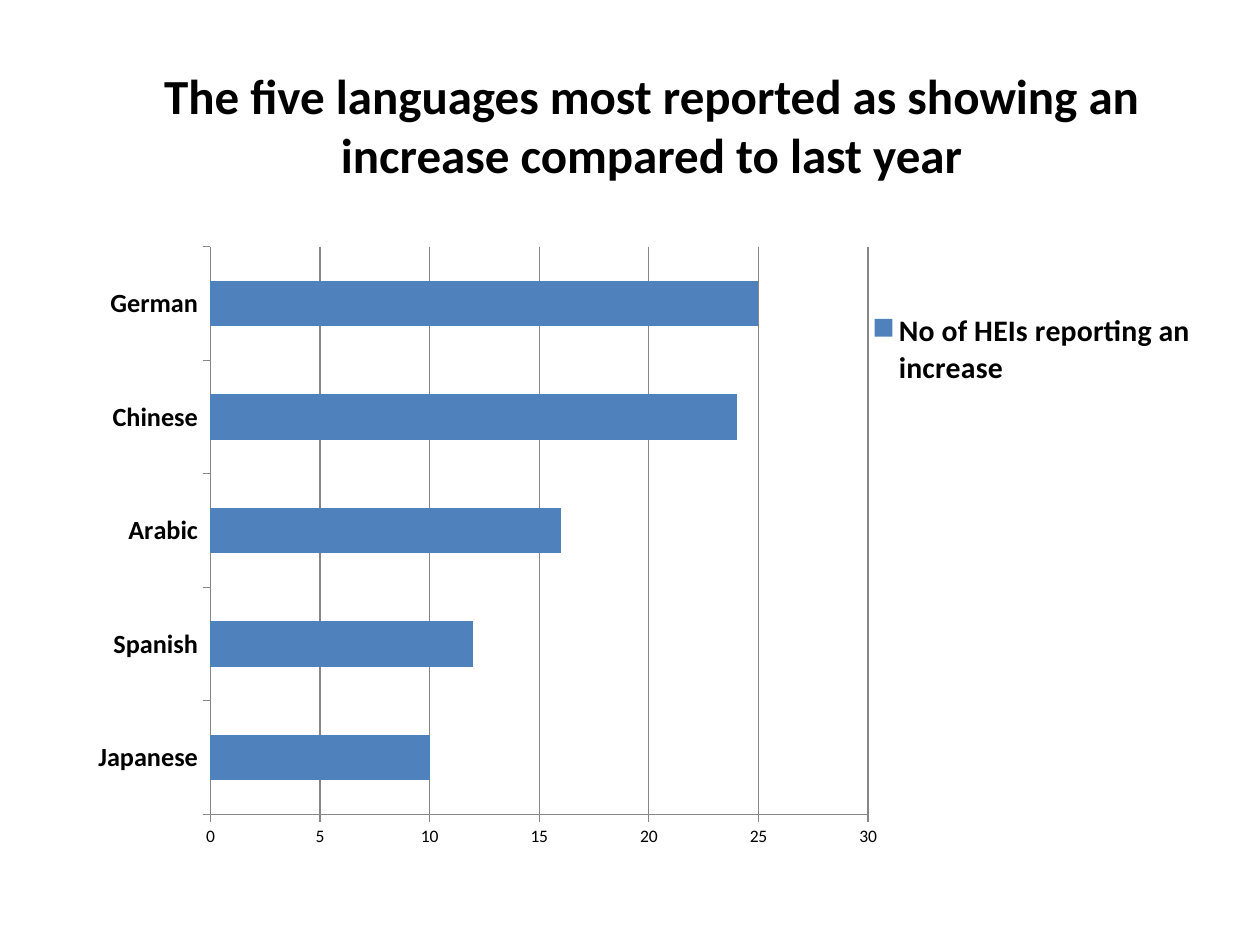
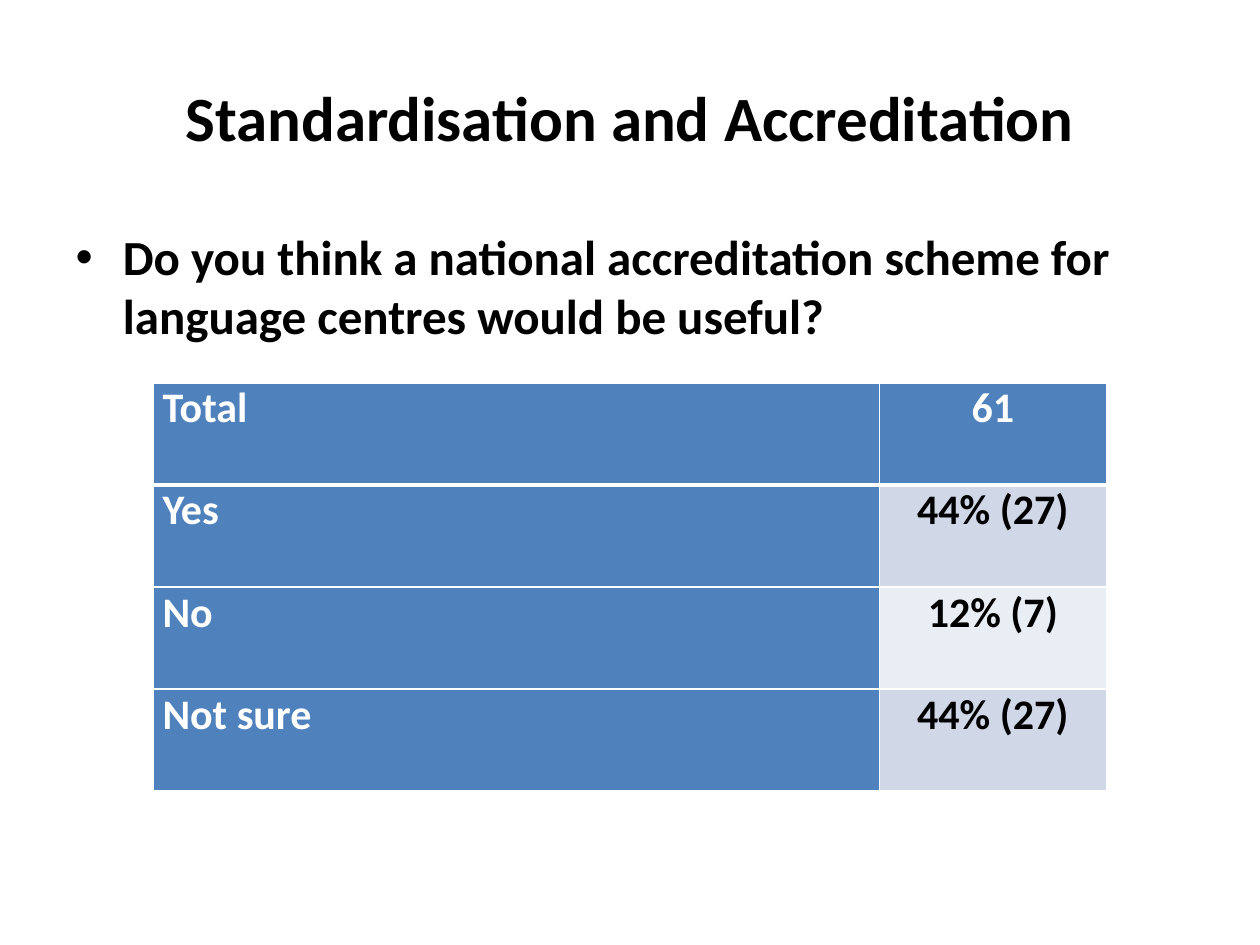
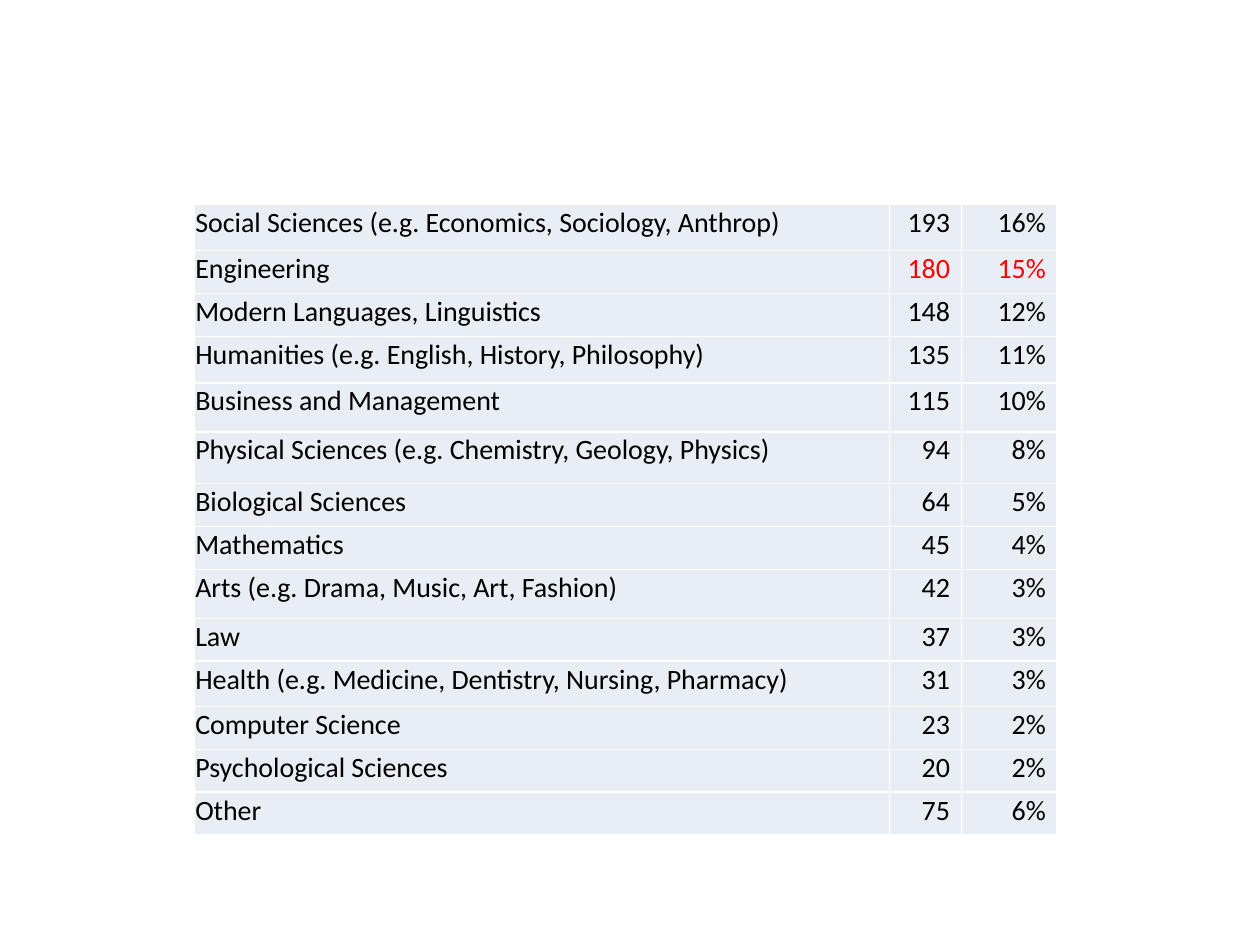
from dataclasses import dataclass

from lxml.etree import SubElement
from pptx import Presentation
from pptx.chart.data import CategoryChartData
from pptx.dml.color import RGBColor
from pptx.enum.chart import XL_CHART_TYPE, XL_LEGEND_POSITION, XL_TICK_MARK
from pptx.enum.text import PP_ALIGN
from pptx.oxml import parse_xml
from pptx.oxml.ns import nsdecls, qn
from pptx.util import Inches, Pt


@dataclass(frozen=True)
class Theme:
    font: str = "Calibri"
    text: str = "000000"
    white: str = "FFFFFF"
    accent: str = "4F81BD"
    band_dark: str = "D0D8E8"
    band_light: str = "E9EDF4"
    highlight: str = "FF0000"
    axis: str = "868686"
    title_size: int = 36
    lead_size: int = 28
    answer_size: int = 24
    subject_size: int = 16
    legend_size: int = 17
    category_size: int = 15
    value_size: int = 10


THEME = Theme()
TITLE_ONLY, TITLE_AND_BODY, BLANK = 5, 1, 6

LANGUAGES = [("Japanese", 10), ("Spanish", 12), ("Arabic", 16), ("Chinese", 24), ("German", 25)]
ANSWERS = [("Total", "61"), ("Yes", "44% (27)"), ("No", "12% (7)"), ("Not sure", "44% (27)")]
SUBJECTS = [
    ("Social Sciences (e.g. Economics, Sociology, Anthrop)", "193", "16%", 0.37),
    ("Engineering", "180", "15%", 0.34),
    ("Modern Languages, Linguistics", "148", "12%", 0.34),
    ("Humanities (e.g. English, History, Philosophy)", "135", "11%", 0.37),
    ("Business and Management", "115", "10%", 0.39),
    ("Physical Sciences (e.g. Chemistry, Geology, Physics)", "94", "8%", 0.41),
    ("Biological Sciences", "64", "5%", 0.34),
    ("Mathematics", "45", "4%", 0.34),
    ("Arts (e.g. Drama, Music, Art, Fashion)", "42", "3%", 0.39),
    ("Law", "37", "3%", 0.34),
    ("Health (e.g. Medicine, Dentistry, Nursing, Pharmacy)", "31", "3%", 0.36),
    ("Computer Science", "23", "2%", 0.34),
    ("Psychological Sciences", "20", "2%", 0.34),
    ("Other", "75", "6%", 0.34),
]


def style_font(font, size, color=THEME.text, bold=False):
    font.name = THEME.font
    font.size = Pt(size)
    font.bold = bold
    font.color.rgb = RGBColor.from_string(color)


def place(shape, left, top, width, height):
    shape.left, shape.top = Inches(left), Inches(top)
    shape.width, shape.height = Inches(width), Inches(height)


def fill_placeholder(shape, text, size, box):
    place(shape, *box)
    shape.text_frame.text = text
    for run in shape.text_frame.paragraphs[0].runs:
        style_font(run.font, size, bold=True)


def set_layout(element, x, y, width, height, inner=False):
    """Give a plot area or legend a manual place, in fractions of the chart."""
    for old in element.findall(qn("c:layout")):
        element.remove(old)
    target = '<c:layoutTarget val="inner"/>' if inner else ""
    layout = parse_xml(
        f'<c:layout {nsdecls("c")}><c:manualLayout>{target}'
        '<c:xMode val="edge"/><c:yMode val="edge"/>'
        f'<c:x val="{x}"/><c:y val="{y}"/><c:w val="{width}"/><c:h val="{height}"/>'
        "</c:manualLayout></c:layout>"
    )
    position = element.find(qn("c:legendPos"))
    if position is None:
        element.insert(0, layout)
    else:
        position.addnext(layout)


def style_line(line):
    line.color.rgb = RGBColor.from_string(THEME.axis)
    line.width = Pt(0.75)


def add_bar_chart(slide, name, points, box):
    data = CategoryChartData()
    data.categories = [label for label, _ in points]
    data.add_series(name, [value for _, value in points])
    frame = slide.shapes.add_chart(XL_CHART_TYPE.BAR_CLUSTERED, *map(Inches, box), data)
    chart = frame.chart
    chart.has_title = False
    style_font(chart.font, THEME.value_size)

    plot = chart.plots[0]
    plot.gap_width = 150
    plot.vary_by_categories = False
    bar_fill = plot.series[0].format.fill
    bar_fill.solid()
    bar_fill.fore_color.rgb = RGBColor.from_string(THEME.accent)

    for axis in (chart.category_axis, chart.value_axis):
        axis.major_tick_mark = XL_TICK_MARK.OUTSIDE
        axis.minor_tick_mark = XL_TICK_MARK.NONE
        style_line(axis.format.line)
    style_font(chart.category_axis.tick_labels.font, THEME.category_size, bold=True)
    values = chart.value_axis
    values.minimum_scale, values.maximum_scale, values.major_unit = 0, 30, 5
    values.has_major_gridlines = True
    style_line(values.major_gridlines.format.line)

    chart.has_legend = True
    legend = chart.legend
    legend.position = XL_LEGEND_POSITION.RIGHT
    legend.include_in_layout = False
    style_font(legend.font, THEME.legend_size, bold=True)
    plot_area = chart.element.find(".//" + qn("c:plotArea"))
    set_layout(plot_area, 0.12, 0.02, 0.58, 0.91, inner=True)
    set_layout(chart.element.find(".//" + qn("c:legend")), 0.7, 0.1, 0.29, 0.17)


def add_plain_table(slide, left, top, columns, rows):
    """Add a table of the given column widths and row heights, without style bands."""
    frame = slide.shapes.add_table(
        len(rows), len(columns), Inches(left), Inches(top), Inches(sum(columns)), Inches(sum(rows))
    )
    table = frame.table
    table.first_row = table.horz_banding = False
    for column, width in zip(table.columns, columns):
        column.width = Inches(width)
    for row, height in zip(table.rows, rows):
        row.height = Inches(height)
    return table


def set_borders(cell, top=1, bottom=1):
    properties = cell._tc.get_or_add_tcPr()
    for side, width in (("L", 1), ("R", 1), ("T", top), ("B", bottom)):
        line = SubElement(properties, qn(f"a:ln{side}"), w=str(Pt(width)))
        fill = SubElement(line, qn("a:solidFill"))
        SubElement(fill, qn("a:srgbClr"), val=THEME.white)


def fill_cell(cell, text, fill, size, margins, color=THEME.text, bold=False, align=PP_ALIGN.LEFT):
    cell.margin_left, cell.margin_top, cell.margin_right, cell.margin_bottom = map(Inches, margins)
    cell.fill.solid()
    cell.fill.fore_color.rgb = RGBColor.from_string(fill)
    cell.text_frame.text = text
    para = cell.text_frame.paragraphs[0]
    para.alignment = align
    style_font(para.runs[0].font, size, color, bold)


def add_answer_table(slide):
    table = add_plain_table(slide, 1.22, 3.04, [5.76, 1.8], [0.81] * len(ANSWERS))
    for row, answer in enumerate(ANSWERS):
        band = THEME.band_dark if row % 2 else THEME.band_light
        for column, text in enumerate(answer):
            cell = table.cell(row, column)
            is_heading = row == 0 or column == 0
            set_borders(cell, top=3 if row == 1 else 1, bottom=3 if row == 0 else 1)
            fill_cell(
                cell, text, THEME.accent if is_heading else band, THEME.answer_size,
                margins=(0.07, 0, 0.07, 0),
                color=THEME.white if is_heading else THEME.text,
                bold=True,
                align=PP_ALIGN.CENTER if column else PP_ALIGN.LEFT,
            )


def add_subject_table(slide):
    heights = [subject[-1] for subject in SUBJECTS]
    table = add_plain_table(slide, 1.54, 1.62, [5.52, 0.57, 0.76], heights)
    for row, (name, count, share, _) in enumerate(SUBJECTS):
        number_color = THEME.highlight if name == "Engineering" else THEME.text
        for column, text in enumerate((name, count, share)):
            cell = table.cell(row, column)
            set_borders(cell)
            fill_cell(
                cell, text, THEME.band_light, THEME.subject_size,
                margins=(0.01, 0.01, 0.09 if column else 0.01, 0),
                color=number_color if column else THEME.text,
                align=PP_ALIGN.RIGHT if column else PP_ALIGN.LEFT,
            )


def add_slide(deck, layout):
    return deck.slides.add_slide(deck.slide_layouts[layout])


def main():
    deck = Presentation()
    deck.slide_width, deck.slide_height = Inches(10), Inches(7.5)

    languages = add_slide(deck, TITLE_ONLY)
    fill_placeholder(
        languages.shapes.title,
        "The five languages most reported as showing an increase compared to last year",
        THEME.lead_size, (0.67, 0.36, 9, 1.25),
    )
    add_bar_chart(languages, "No of HEIs reporting an increase", LANGUAGES, (0.59, 1.86, 9, 4.95))

    accreditation = add_slide(deck, TITLE_AND_BODY)
    fill_placeholder(
        accreditation.shapes.title, "Standardisation and Accreditation",
        THEME.title_size, (0.5, 0.3, 9, 1.25),
    )
    fill_placeholder(
        accreditation.placeholders[1],
        "Do you think a national accreditation scheme for language centres would be useful?",
        THEME.lead_size, (0.5, 1.75, 9, 4.95),
    )
    add_answer_table(accreditation)

    add_subject_table(add_slide(deck, BLANK))
    deck.save("out.pptx")


if __name__ == "__main__":
    main()
